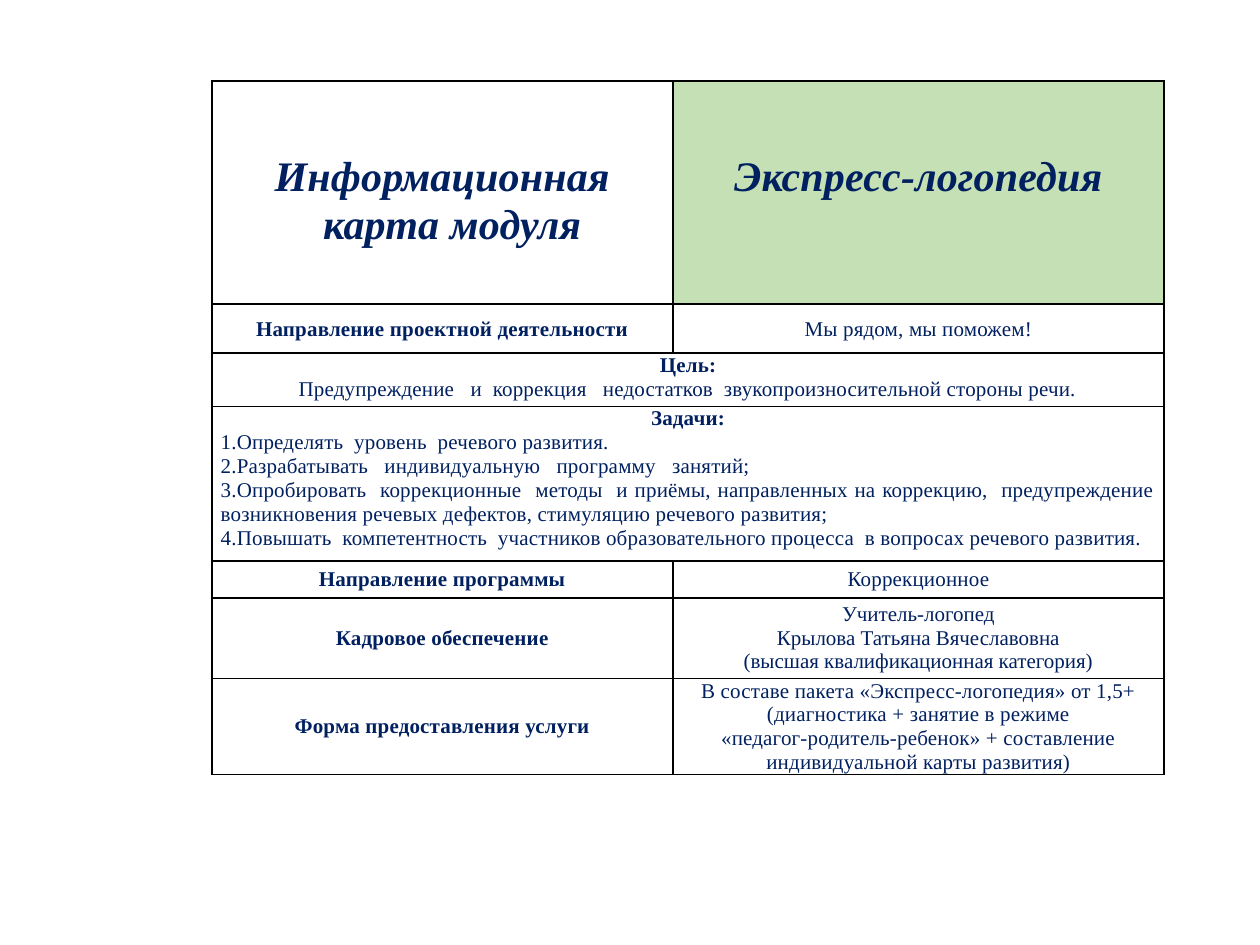
import lxml.etree
import pptx
import pptx.dml.color
import pptx.enum.text
import pptx.oxml.ns
import pptx.util

Cm, Pt = pptx.util.Cm, pptx.util.Pt
ALIGN = pptx.enum.text.PP_ALIGN
ANCHOR = pptx.enum.text.MSO_ANCHOR

NAVY = pptx.dml.color.RGBColor(0x00, 0x20, 0x60)
GREEN = pptx.dml.color.RGBColor(0xC5, 0xE0, 0xB4)
BLACK = pptx.dml.color.RGBColor(0x00, 0x00, 0x00)

HANGING = Cm(-0.64)
COLUMN_SHARES = [0.484, 0.516]
ROW_HEIGHTS = [4.5, 0.99, 1.07, 3.12, 0.74, 1.63, 1.93]

# Paragraph styles: font attributes, paragraph attributes, indents, letter spacing
BASE_FONT = {"name": "Times New Roman", "size": Pt(12), "bold": False, "italic": False}
BASE_LAYOUT = {"alignment": ALIGN.CENTER, "line_spacing": Pt(13.7)}


def make_style(font=None, layout=None, margin=0, indent=HANGING, spacing=10):
    return {"font": {**BASE_FONT, **(font or {})},
            "layout": {**BASE_LAYOUT, **(layout or {})},
            "margin": margin, "indent": indent, "spacing": spacing}


HEADING_FONT = {"size": Pt(24), "bold": True, "italic": True}
HEADING_LAYOUT = {"line_spacing": Pt(27.4)}
HEADING = make_style(HEADING_FONT, HEADING_LAYOUT)
HEADING_SHIFTED = make_style(HEADING_FONT, HEADING_LAYOUT, margin=Cm(0.4), indent=0)
LABEL = make_style({"bold": True})
VALUE = make_style()
TASK = make_style(layout={"alignment": ALIGN.JUSTIFY})
STAFF = make_style(layout={"line_spacing": 1.0}, indent=0, spacing=0)

# One list of cells per row; a single cell spans both columns
ROWS = [
    [[("Информационная", HEADING), ("карта модуля", HEADING_SHIFTED)],
     [("Экспресс-логопедия", HEADING)]],
    [[("Направление проектной деятельности", LABEL)],
     [("Мы рядом, мы поможем!", VALUE)]],
    [[("Цель:", LABEL),
      ("Предупреждение   и  коррекция   недостатков  звукопроизносительной стороны речи.", VALUE)]],
    [[("Задачи:", LABEL),
      ("1.Определять  уровень  речевого развития.", TASK),
      ("2.Разрабатывать   индивидуальную   программу   занятий;", TASK),
      ("3.Опробировать  коррекционные  методы  и приёмы, направленных на коррекцию,  "
       "предупреждение возникновения речевых дефектов, стимуляцию речевого развития;", TASK),
      ("4.Повышать  компетентность  участников образовательного процесса  "
       "в вопросах речевого развития.", TASK)]],
    [[("Направление программы", LABEL)], [("Коррекционное", VALUE)]],
    [[("Кадровое обеспечение", LABEL)],
     [("Учитель-логопед", STAFF),
      ("Крылова Татьяна Вячеславовна", STAFF),
      ("(высшая квалификационная категория)", STAFF)]],
    [[("Форма предоставления услуги", LABEL)],
     [("В составе пакета «Экспресс-логопедия» от 1,5+", VALUE),
      ("(диагностика + занятие в режиме", VALUE),
      ("«педагог-родитель-ребенок» + составление индивидуальной карты развития)", VALUE)]],
]


def set_attributes(target, values):
    for name, value in values.items():
        setattr(target, name, value)


def set_borders(cell):
    properties = cell._tc.get_or_add_tcPr()
    qn = pptx.oxml.ns.qn
    for position, side in enumerate(("lnL", "lnR", "lnT", "lnB")):
        line = lxml.etree.Element(qn(f"a:{side}"), w=str(Pt(1)))
        fill = lxml.etree.SubElement(line, qn("a:solidFill"))
        lxml.etree.SubElement(fill, qn("a:srgbClr"), val=str(BLACK))
        properties.insert(position, line)


def fill_cell(cell, entries, anchor, top_margin):
    set_attributes(cell, {"vertical_anchor": anchor, "margin_left": Cm(0.18),
                          "margin_right": Cm(0.18), "margin_top": top_margin,
                          "margin_bottom": 0})
    frame = cell.text_frame
    for index, (text, style) in enumerate(entries):
        paragraph = frame.add_paragraph() if index else frame.paragraphs[0]
        properties = paragraph._p.get_or_add_pPr()
        properties.set("marL", str(style["margin"]))
        properties.set("indent", str(style["indent"]))
        set_attributes(paragraph, style["layout"])
        run = paragraph.add_run()
        run.text = text
        set_attributes(run.font, style["font"])
        run.font.color.rgb = NAVY
        run._r.get_or_add_rPr().set("spc", str(style["spacing"]))


def add_module_card(slide, left, top, width):
    height = Cm(sum(ROW_HEIGHTS))
    table = slide.shapes.add_table(len(ROWS), 2, left, top, width, height).table
    set_attributes(table, {"first_row": False, "horz_banding": False})
    for column, share in zip(table.columns, COLUMN_SHARES):
        column.width = int(width * share)

    for row_index, (entries_in_row, row_height) in enumerate(zip(ROWS, ROW_HEIGHTS)):
        table.rows[row_index].height = Cm(row_height)
        cells = [table.cell(row_index, column) for column in range(2)]
        for cell in cells:
            cell.fill.background()
            set_borders(cell)
        spans = len(entries_in_row) == 1
        if spans:
            cells[0].merge(cells[1])

        # The heading row hangs from the top; other paired cells are centred
        is_heading = row_index == 0
        anchor = ANCHOR.TOP if is_heading or spans else ANCHOR.MIDDLE
        top_margin = Cm(1.45) if is_heading else 0
        for cell, entries in zip(cells, entries_in_row):
            fill_cell(cell, entries, anchor, top_margin)

    # Module name stands out in green
    name_cell = table.cell(0, 1)
    name_cell.fill.solid()
    name_cell.fill.fore_color.rgb = GREEN


def main():
    presentation = pptx.Presentation()
    presentation.slide_width = Cm(25.4)
    presentation.slide_height = Cm(19.05)
    slide = presentation.slides.add_slide(presentation.slide_layouts[6])
    add_module_card(slide, Cm(4.27), Cm(1.63), Cm(19.2))
    presentation.save("out.pptx")


if __name__ == "__main__":
    main()
